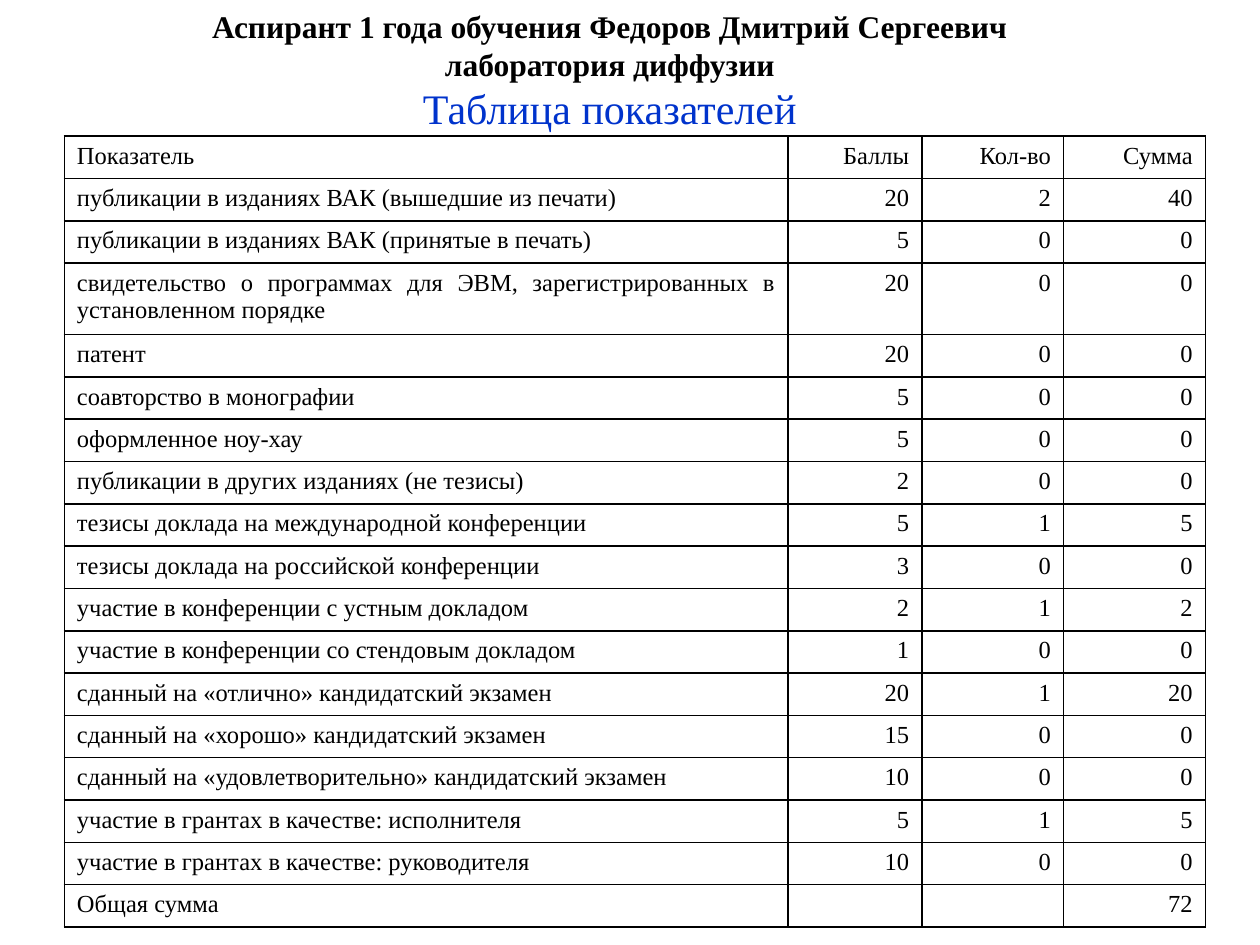
from lxml import etree
from pptx import Presentation
from pptx.dml.color import RGBColor
from pptx.enum.text import MSO_ANCHOR, MSO_AUTO_SIZE, PP_ALIGN
from pptx.oxml.ns import qn
from pptx.util import Pt

CENTER, RIGHT, JUSTIFY = PP_ALIGN.CENTER, PP_ALIGN.RIGHT, PP_ALIGN.JUSTIFY
MIDDLE, NO_FIT = MSO_ANCHOR.MIDDLE, MSO_AUTO_SIZE.NONE
FONT, BLACK, BLUE = "Times New Roman", "000000", "0033CC"
CELL_SIZE = 14

TITLE = ["Аспирант 1 года обучения Федоров Дмитрий Сергеевич", "лаборатория диффузии"]
SUBTITLE = "Таблица показателей"
HEADER = ("Показатель", "Баллы", "Кол-во", "Сумма")
SCORES = [
    ("публикации в изданиях ВАК (вышедшие из печати)", 20, 2),
    ("публикации в изданиях ВАК (принятые в печать)", 5, 0),
    ("свидетельство о программах для ЭВМ, зарегистрированных в установленном порядке", 20, 0),
    ("патент", 20, 0),
    ("соавторство в монографии", 5, 0),
    ("оформленное ноу-хау", 5, 0),
    ("публикации в других изданиях (не тезисы)", 2, 0),
    ("тезисы доклада на международной конференции", 5, 1),
    ("тезисы доклада на российской конференции", 3, 0),
    ("участие в конференции с устным докладом", 2, 1),
    ("участие в конференции со стендовым докладом", 1, 0),
    ("сданный на «отлично» кандидатский экзамен", 20, 1),
    ("сданный на «хорошо» кандидатский экзамен", 15, 0),
    ("сданный на «удовлетворительно» кандидатский экзамен", 10, 0),
    ("участие в грантах в качестве: исполнителя", 5, 1),
    ("участие в грантах в качестве: руководителя", 10, 0),
]
TOTAL_LABEL = "Общая сумма"
COL_WIDTHS = (413.5, 76.5, 81, 81)
ROW_HEIGHT, TALL_HEIGHT, TALL_ROW = 24.2, 40.8, 3
TABLE_LEFT, TABLE_TOP = 36.8, 77.8


def color(hex_value):
    return RGBColor.from_string(hex_value)


def add_run(p, text, size, hex_value, bold=False):
    r = p.add_run()
    r.text = text
    r.font.name, r.font.size, r.font.bold = FONT, Pt(size), bold
    r.font.color.rgb = color(hex_value)


def add_borders(cell):
    tc_pr = cell._tc.get_or_add_tcPr()
    for side in ("a:lnL", "a:lnR", "a:lnT", "a:lnB"):
        ln = etree.SubElement(tc_pr, qn(side), w=str(Pt(1)))
        fill = etree.SubElement(ln, qn("a:solidFill"))
        etree.SubElement(fill, qn("a:srgbClr"), val=BLACK)


def fill_cell(cell, text, align):
    add_borders(cell)
    cell.fill.background()
    p = cell.text_frame.paragraphs[0]
    p.alignment = align
    if text:
        add_run(p, text, CELL_SIZE, BLACK)
    else:
        etree.SubElement(p._p, qn("a:endParaRPr"), sz=str(CELL_SIZE * 100))


def add_heading(s):
    title = s.shapes.title
    title.left, title.top, title.width, title.height = Pt(42.5), Pt(0), Pt(612), Pt(51)
    tf = title.text_frame
    tf.auto_size, tf.vertical_anchor = NO_FIT, MIDDLE
    p = tf.paragraphs[0]
    p.alignment = CENTER
    for i, line in enumerate(TITLE):
        if i:
            p.add_line_break()
        add_run(p, line, 18, BLACK, True)

    tf = s.shapes.add_textbox(Pt(96.5), Pt(43.5), Pt(504), Pt(34)).text_frame
    tf.word_wrap = True
    p = tf.paragraphs[0]
    p.alignment = CENTER
    add_run(p, SUBTITLE, 24, BLUE)


def add_score_table(s):
    rows = [HEADER]
    rows += [(name, points, count, points * count) for name, points, count in SCORES]
    total = sum(points * count for _, points, count in SCORES)
    rows.append((TOTAL_LABEL, "", "", total))
    heights = [TALL_HEIGHT if i == TALL_ROW else ROW_HEIGHT for i in range(len(rows))]

    table = s.shapes.add_table(len(rows), len(HEADER), Pt(TABLE_LEFT), Pt(TABLE_TOP),
                               Pt(sum(COL_WIDTHS)), Pt(sum(heights))).table
    table.first_row = table.horz_banding = False
    for col, width in zip(table.columns, COL_WIDTHS):
        col.width = Pt(width)
    for row, height, values in zip(table.rows, heights, rows):
        row.height = Pt(height)
        for j, value in enumerate(values):
            fill_cell(row.cells[j], str(value), RIGHT if j else JUSTIFY)


def main():
    prs = Presentation()
    prs.slide_width, prs.slide_height = Pt(720), Pt(540)
    s = prs.slides.add_slide(prs.slide_layouts[5])
    add_heading(s)
    add_score_table(s)
    prs.save("out.pptx")


if __name__ == "__main__":
    main()
